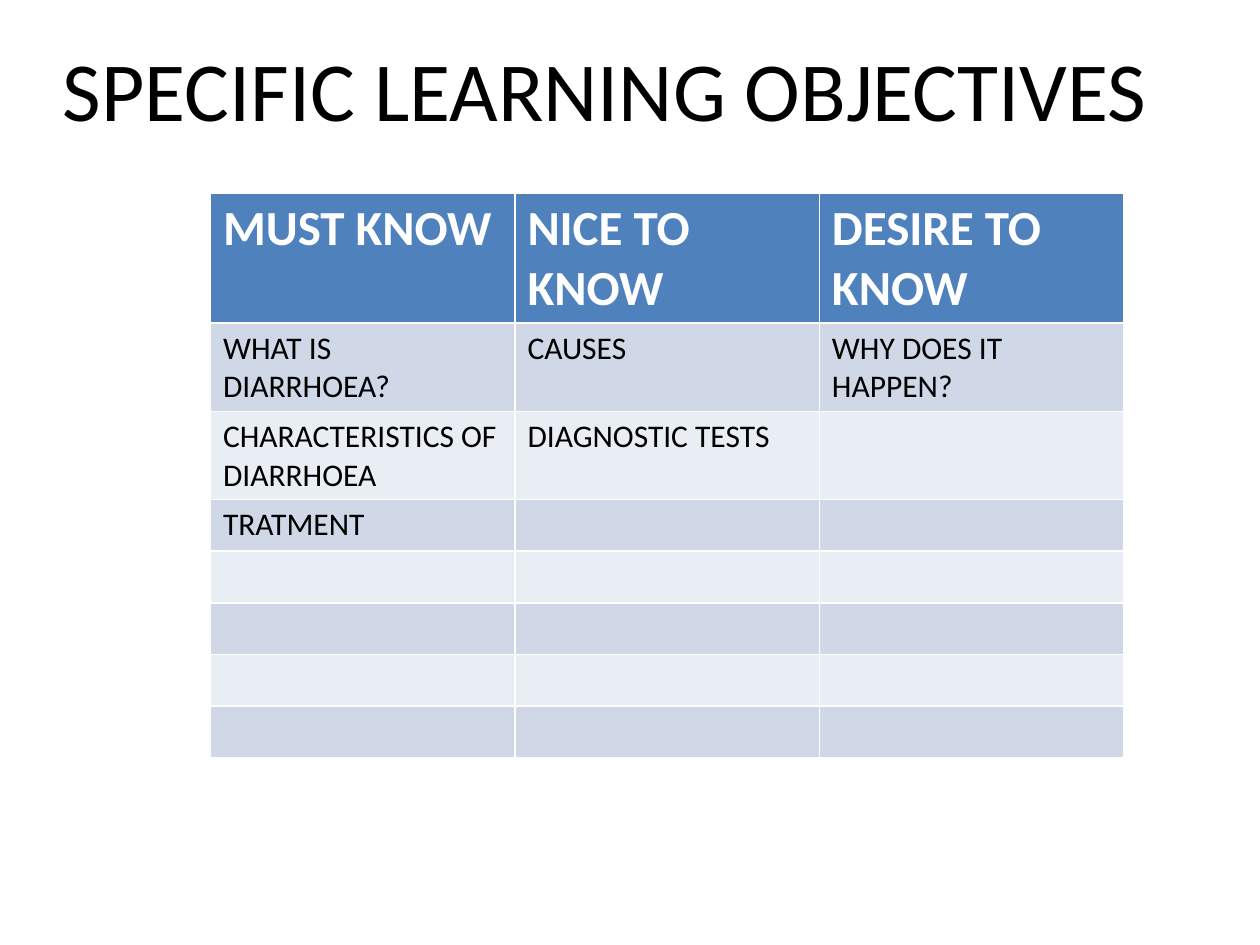
from typing import NamedTuple

from pptx import Presentation
from pptx.dml.color import RGBColor
from pptx.util import Inches, Pt


class CellStyle(NamedTuple):
    """Look of the cells in one table row."""

    fill: str
    text: str
    size: int
    bold: bool


HEADER = CellStyle("4F81BD", "FFFFFF", 28, True)
BANDS = (
    CellStyle("E9EDF4", "000000", 18, False),
    CellStyle("D0D8E8", "000000", 18, False),
)
OBJECTIVES = [
    ("MUST KNOW", "NICE TO KNOW", "DESIRE TO KNOW"),
    ("WHAT IS DIARRHOEA?", "CAUSES", "WHY DOES IT HAPPEN?"),
    ("CHARACTERISTICS OF DIARRHOEA", "DIAGNOSTIC TESTS", ""),
    ("TRATMENT", "", ""),
] + [("", "", "")] * 4


def colour(value: str) -> RGBColor:
    """Turn a hex string into a colour."""
    return RGBColor.from_string(value)


def write(frame, text: str, size: int, text_colour: str, bold: bool = False) -> None:
    """Set and format the text of a frame."""
    frame.text = text
    paragraph = frame.paragraphs[0]
    for font in [paragraph.font] + [run.font for run in paragraph.runs]:
        font.name = "Calibri"
        font.size = Pt(size)
        font.bold = bold
        font.color.rgb = colour(text_colour)


def add_title(slide, text: str) -> None:
    """Add the slide heading."""
    heading = slide.shapes.add_textbox(
        Inches(0.5), Inches(0.3), Inches(9), Inches(0.81)
    ).text_frame
    heading.word_wrap = True
    heading.margin_left = heading.margin_right = Inches(0)
    heading.margin_top = heading.margin_bottom = Inches(0)
    write(heading, text, 48, "000000")


def add_objectives(slide, rows: list[tuple[str, ...]]) -> None:
    """Add the table with a header and alternating bands."""
    row_height = Inches(0.41)
    table = slide.shapes.add_table(
        len(rows), len(rows[0]), Inches(1.67), Inches(1.53),
        Inches(7.25), row_height * len(rows),
    ).table
    for row_index, entries in enumerate(rows):
        style = BANDS[row_index % 2] if row_index else HEADER
        for column_index, entry in enumerate(entries):
            cell = table.cell(row_index, column_index)
            cell.fill.solid()
            cell.fill.fore_color.rgb = colour(style.fill)
            write(cell.text_frame, entry, style.size, style.text, style.bold)


def main() -> None:
    """Build and save the slide."""
    presentation = Presentation()
    presentation.slide_width = Inches(10)
    presentation.slide_height = Inches(7.5)
    slide = presentation.slides.add_slide(presentation.slide_layouts[6])
    add_title(slide, "SPECIFIC LEARNING OBJECTIVES")
    add_objectives(slide, OBJECTIVES)
    presentation.save("out.pptx")


if __name__ == "__main__":
    main()
